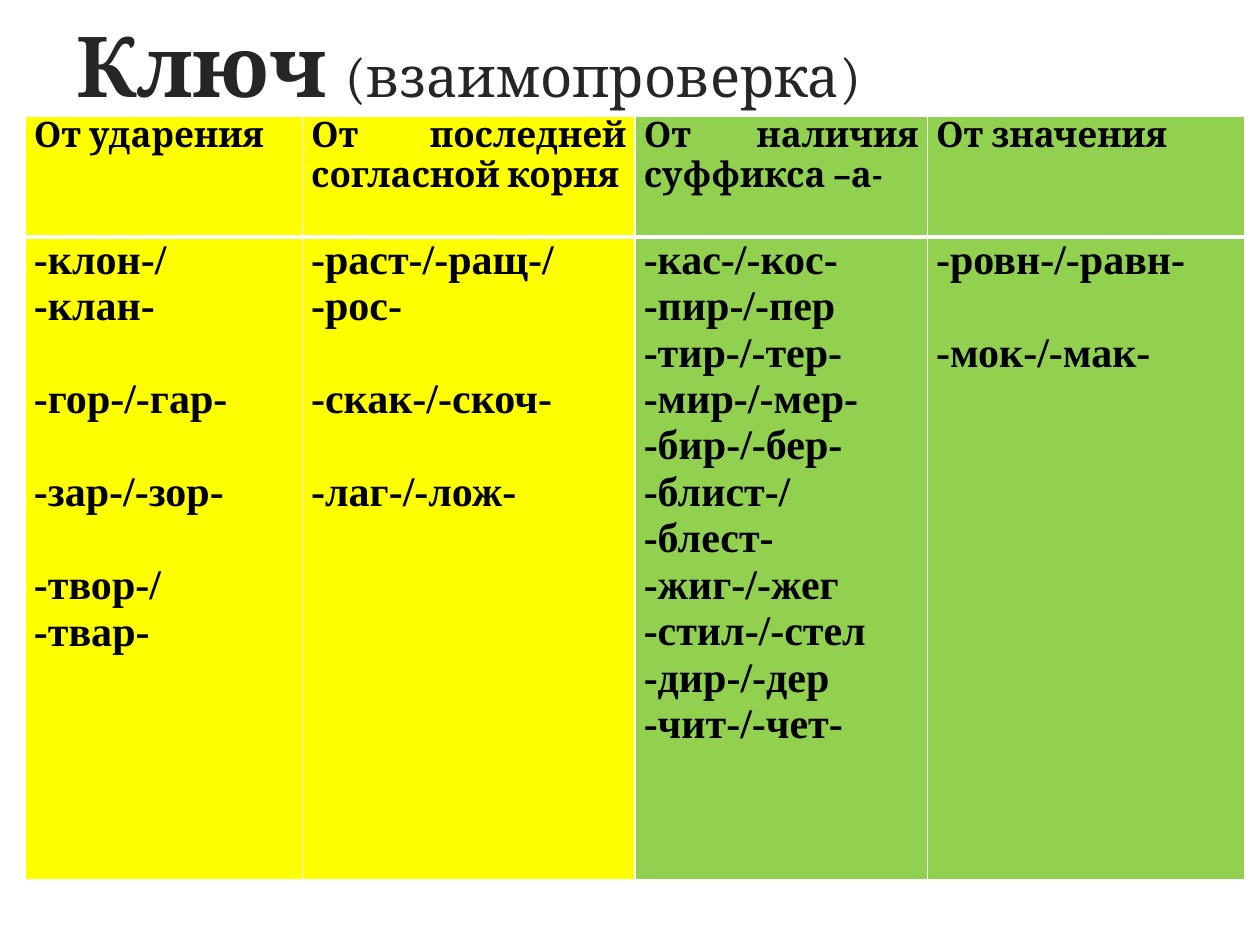
import pptx
import pptx.dml.color
import pptx.enum.text
import pptx.oxml
import pptx.oxml.ns
import pptx.util
from pptx.dml.color import RGBColor
from pptx.util import Inches, Pt

BLACK = RGBColor(0, 0, 0)
DARK_GRAY = RGBColor(0x26, 0x26, 0x26)
YELLOW = RGBColor(0xFF, 0xFF, 0)
GREEN = RGBColor(0x92, 0xD0, 0x50)
WHITE = RGBColor(0xFF, 0xFF, 0xFF)

HEADING_FONT = "Cambria"
ROOT_FONT = "Times New Roman"
GROUP_GAP = Pt(26.6)  # one line of root text

# Heading, column width, fill, groups of alternating roots
RULES = [
    ("От ударения", 2.2, YELLOW,
     [["-клон-/", "-клан-"], ["-гор-/-гар-"], ["-зар-/-зор-"],
      ["-твор-/", "-твар-"]]),
    ("От последней согласной корня", 2.64, YELLOW,
     [["-раст-/-ращ-/", "-рос-"], ["-скак-/-скоч-"], ["-лаг-/-лож-"]]),
    ("От наличия суффикса –а-", 2.32, GREEN,
     [["-кас-/-кос-", "-пир-/-пер", "-тир-/-тер-", "-мир-/-мер-",
       "-бир-/-бер-", "-блист-/", "-блест-", "-жиг-/-жег",
       "-стил-/-стел", "-дир-/-дер", "-чит-/-чет-"]]),
    ("От значения", 2.52, GREEN,
     [["-ровн-/-равн-"], ["-мок-/-мак-"]]),
]
ROW_HEIGHTS = [0.96, 5.1]


def set_font(font, name, size, color, bold):
    font.name = name
    font.size = Pt(size)
    font.color.rgb = color
    font.bold = bold


def add_title(slide):
    box = slide.shapes.add_textbox(
        Inches(0.51), Inches(0.13), Inches(8.79), Inches(0.75))
    frame = box.text_frame
    frame.word_wrap = True
    frame.vertical_anchor = pptx.enum.text.MSO_ANCHOR.MIDDLE
    paragraph = frame.paragraphs[0]
    for text, size, bold in [("Ключ ", 48, True),
                             ("(взаимопроверка)", 32, False)]:
        run = paragraph.add_run()
        run.text = text
        set_font(run.font, HEADING_FONT, size, DARK_GRAY, bold)


def set_borders(cell, bottom_width):
    properties = cell._tc.get_or_add_tcPr()
    widths = {"lnL": 1, "lnR": 1, "lnT": 1, "lnB": bottom_width}
    for position, (side, width) in enumerate(widths.items()):
        line = pptx.oxml.parse_xml(
            f'<a:{side} {pptx.oxml.ns.nsdecls("a")} w="{Pt(width)}">'
            f'<a:solidFill><a:srgbClr val="{WHITE}"/></a:solidFill></a:{side}>')
        properties.insert(position, line)


def fill_cell(cell, groups, font_name, size, color, bottom_width):
    cell.margin_left = cell.margin_right = Inches(0.07)
    cell.margin_top = cell.margin_bottom = 0
    cell.fill.solid()
    cell.fill.fore_color.rgb = color
    set_borders(cell, bottom_width)

    lines = [(text, group_index > 0 and line_index == 0)
             for group_index, group in enumerate(groups)
             for line_index, text in enumerate(group)]
    frame = cell.text_frame
    for index, (text, starts_group) in enumerate(lines):
        paragraph = frame.add_paragraph() if index else frame.paragraphs[0]
        paragraph.text = text
        paragraph.alignment = pptx.enum.text.PP_ALIGN.JUSTIFY
        if starts_group:
            paragraph.space_before = GROUP_GAP
        set_font(paragraph.font, font_name, size, BLACK, True)


def add_rules_table(slide):
    table = slide.shapes.add_table(
        len(ROW_HEIGHTS), len(RULES), Inches(0.2), Inches(0.92),
        Inches(sum(rule[1] for rule in RULES)),
        Inches(sum(ROW_HEIGHTS))).table
    for row, height in zip(table.rows, ROW_HEIGHTS):
        row.height = Inches(height)
    for column, (heading, width, color, groups) in enumerate(RULES):
        table.columns[column].width = Inches(width)
        fill_cell(table.cell(0, column), [[heading]], HEADING_FONT, 20,
                  color, 3)
        fill_cell(table.cell(1, column), groups, ROOT_FONT, 24, color, 1)


def main():
    presentation = pptx.Presentation()
    presentation.slide_width = Inches(10)
    presentation.slide_height = Inches(7.5)
    slide = presentation.slides.add_slide(presentation.slide_layouts[6])

    # Title with its note
    add_title(slide)

    # What the choice of vowel depends on, and the roots
    add_rules_table(slide)

    presentation.save("out.pptx")


if __name__ == "__main__":
    main()
